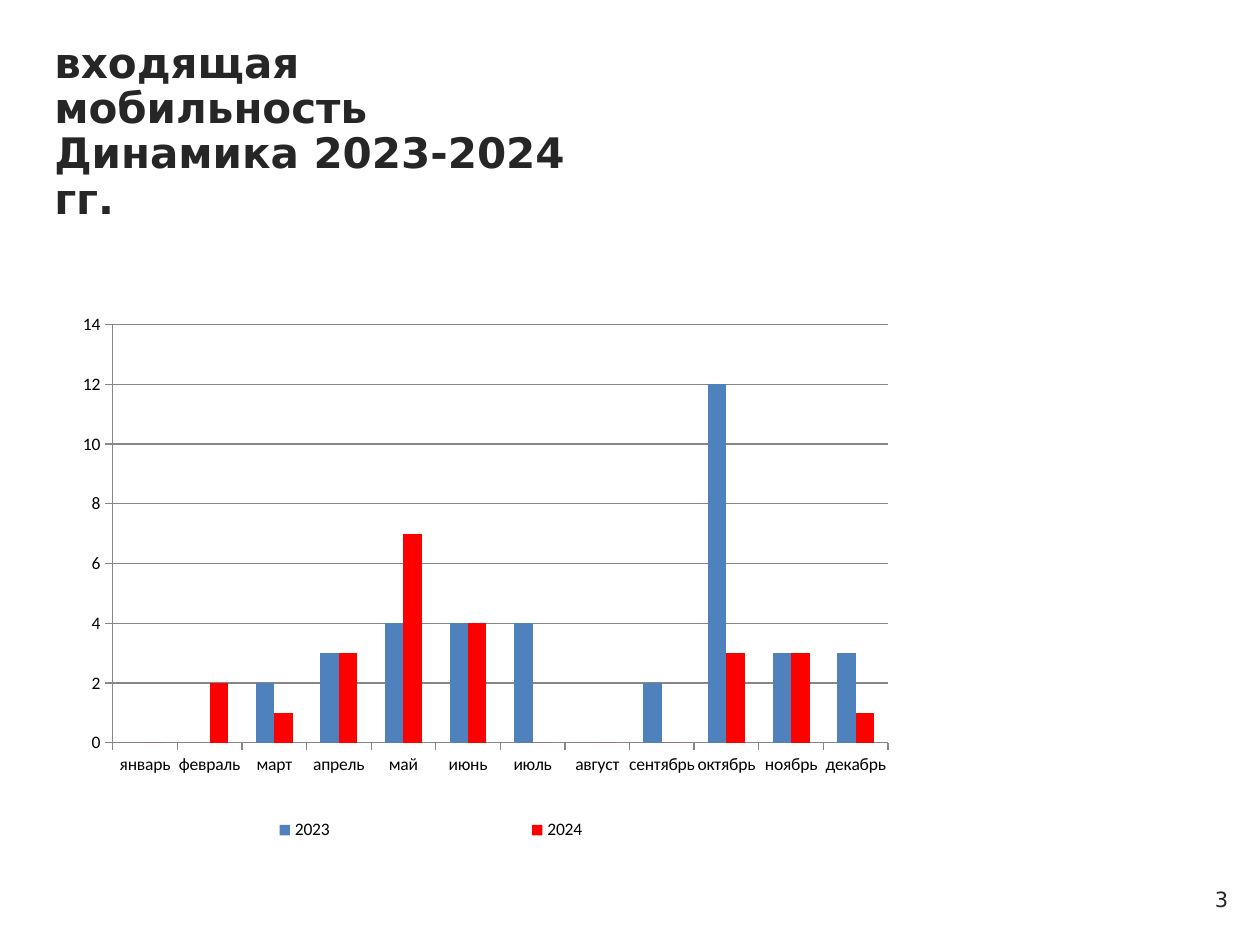
"""Builds a slide with a monthly chart of incoming mobility for 2023 and 2024."""
from lxml.etree import SubElement
from pptx import Presentation
from pptx.chart.data import CategoryChartData as Data
from pptx.dml.color import RGBColor as RGB
from pptx.enum.chart import XL_CHART_TYPE as Kind, XL_LEGEND_POSITION as Pos
from pptx.enum.chart import XL_TICK_MARK as Tick
from pptx.enum.text import MSO_ANCHOR as Anchor, MSO_AUTO_SIZE as Fit, PP_ALIGN as Align
from pptx.oxml.ns import qn
from pptx.util import Cm, Pt

INK = RGB(0x26, 0x26, 0x26)
BLACK = RGB(0, 0, 0)
GRAY = RGB(0x86, 0x86, 0x86)
BLUE = RGB(0x4F, 0x81, 0xBD)
RED = RGB(0xFF, 0, 0)


def write(frame, lines, size, bold, align):
    frame.word_wrap = True
    frame.auto_size = Fit.NONE
    for i, line in enumerate(lines):
        para = frame.add_paragraph() if i else frame.paragraphs[0]
        para.alignment = align
        para.line_spacing = 0.9
        run = para.add_run()
        run.text = line
        font = run.font
        font.name = "DejaVu Sans"
        font.size = Pt(size)
        font.bold = bold
        font.color.rgb = INK


def place(node, rect, inner=False):
    layout = node.find(qn("c:layout"))
    if layout is None:
        layout = SubElement(node, qn("c:layout"))
        node.remove(layout)
        node.insert(1 if node.tag == qn("c:legend") else 0, layout)
    for child in list(layout):
        layout.remove(child)
    manual = SubElement(layout, qn("c:manualLayout"))
    if inner:
        SubElement(manual, qn("c:layoutTarget")).set("val", "inner")
    for key in ("xMode", "yMode"):
        SubElement(manual, qn("c:" + key)).set("val", "edge")
    for key, val in zip("xywh", rect):
        SubElement(manual, qn("c:" + key)).set("val", str(val))


deck = Presentation()
deck.slide_width, deck.slide_height = Cm(25.4), Cm(19.05)
slide = deck.slides.add_slide(deck.slide_layouts[5])

title = slide.shapes.title
title.left, title.top = Cm(0.84), Cm(0.69)
title.width, title.height = Cm(11.35), Cm(3.96)
title.text_frame.vertical_anchor = Anchor.MIDDLE
write(title.text_frame, ["входящая мобильность", "Динамика 2023-2024 гг."],
      24, True, Align.LEFT)

data = Data()
data.categories = ["январь", "февраль", "март", "апрель", "май", "июнь", "июль",
                   "август", "сентябрь", "октябрь", "ноябрь", "декабрь"]
data.add_series("2023", [0, 0, 2, 3, 4, 4, 4, 0, 2, 12, 3, 3])
data.add_series("2024", [0, 2, 1, 3, 7, 4, 0, 0, 0, 3, 3, 1])
chart = slide.shapes.add_chart(Kind.COLUMN_CLUSTERED, Cm(1.07), Cm(5.61),
                               Cm(20.04), Cm(11.71), data).chart
chart.has_title = False
chart.font.name = "Calibri"
chart.font.size = Pt(10)
chart.font.color.rgb = BLACK

plot = chart.plots[0]
plot.gap_width = 150
plot.overlap = 0
plot.vary_by_categories = False
for bars, color in zip(plot.series, (BLUE, RED)):
    bars.format.fill.solid()
    bars.format.fill.fore_color.rgb = color

months, scale = chart.category_axis, chart.value_axis
scale.minimum_scale, scale.maximum_scale, scale.major_unit = 0, 14, 2
scale.has_major_gridlines = True
for axis in (months, scale):
    axis.major_tick_mark = Tick.OUTSIDE
    axis.minor_tick_mark = Tick.NONE
for part in (months, scale, scale.major_gridlines):
    part.format.line.color.rgb = GRAY
    part.format.line.width = Pt(0.75)

chart.has_legend = True
legend = chart.legend
legend.position = Pos.RIGHT
legend.include_in_layout = False
area = chart.element.find(".//" + qn("c:plotArea"))
place(area, (0.06, 0.08, 0.78, 0.72), True)
place(chart.element.find(".//" + qn("c:legend")), (0.03, 0.91, 0.7, 0.08))

number = slide.shapes.add_textbox(Cm(13.61), Cm(17.81), Cm(11.4), Cm(1.57))
write(number.text_frame, ["3"], 12, False, Align.RIGHT)

deck.save("out.pptx")
